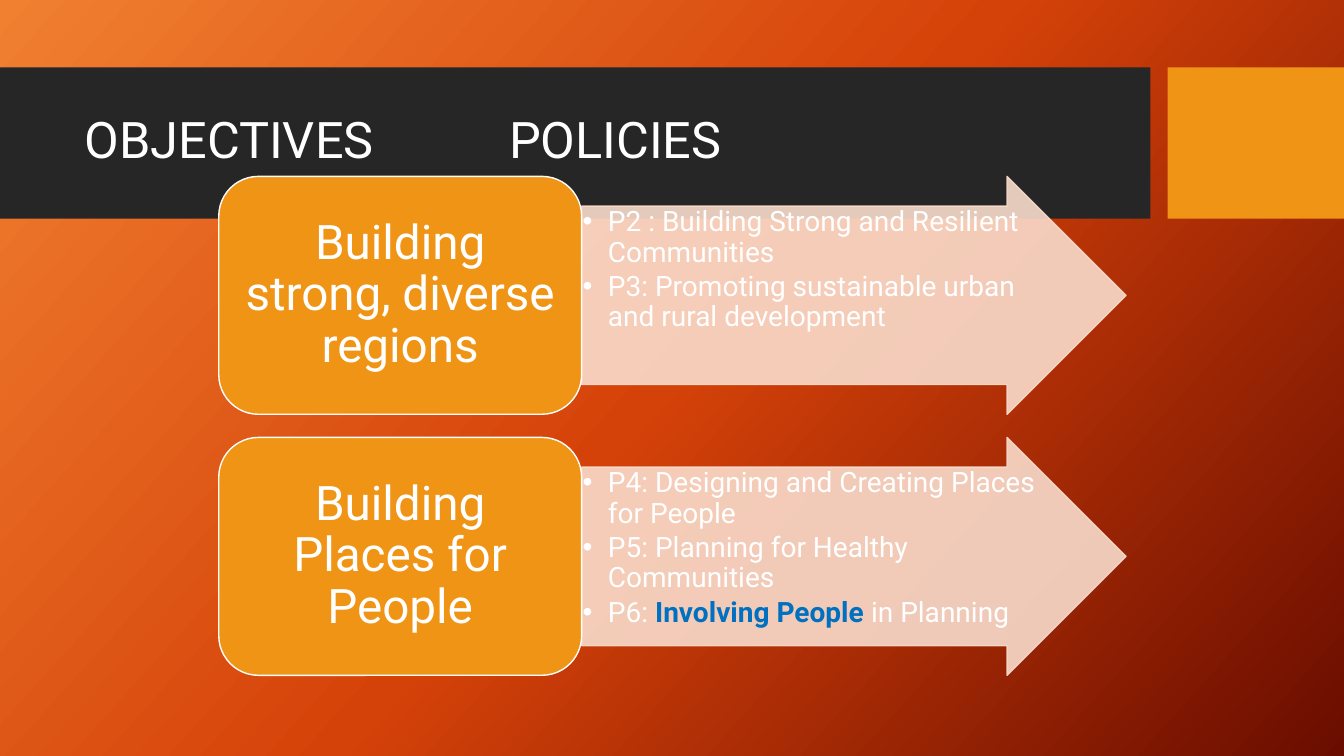
from copy import deepcopy
from dataclasses import dataclass

from lxml.etree import SubElement
from pptx import Presentation
from pptx.dml.color import RGBColor
from pptx.enum.shapes import MSO_SHAPE
from pptx.enum.text import MSO_ANCHOR, MSO_AUTO_SIZE, PP_ALIGN
from pptx.oxml.ns import qn
from pptx.util import Inches, Pt

SLIDE_WIDTH, SLIDE_HEIGHT = Inches(13.33), Inches(7.5)
FONT = "Roboto"
WHITE, CHARCOAL, AMBER, PEACH, BLUE = "FFFFFF", "262626", "F09415", "F9DCCC", "0070C0"
BACKGROUND_STOPS = (("F18031", 0), ("D54209", 50), ("6A0D00", 100))
TWO_CONTENT_LAYOUT = 3


@dataclass(frozen=True)
class Box:
    """A rectangle in percent of the slide's width and height."""
    left: float
    top: float
    width: float
    height: float

    def frame(self) -> dict:
        return {
            "left": round(SLIDE_WIDTH * self.left / 100),
            "top": round(SLIDE_HEIGHT * self.top / 100),
            "width": round(SLIDE_WIDTH * self.width / 100),
            "height": round(SLIDE_HEIGHT * self.height / 100),
        }


@dataclass(frozen=True)
class Run:
    text: str
    color: str = WHITE
    bold: bool = False


@dataclass(frozen=True)
class Objective:
    name: str
    policies: tuple[tuple[Run, ...], ...]


BAND = Box(0, 8.93, 85.6, 20)
BAND_ACCENT = Box(86.87, 8.93, 13.13, 20)
TITLE = Box(5.55, 10.93, 78.84, 15.73)
ROW_TOP, ROW_HEIGHT, ROW_PITCH = 23.33, 31.47, 34.53
CARD_LEFT, CARD_WIDTH = 16.28, 27
ARROW_LEFT, ARROW_WIDTH = CARD_LEFT + CARD_WIDTH, 40.5
LIST_WIDTH, LIST_INSET = 33.9, 4

OBJECTIVES = (
    Objective("Building strong, diverse regions", (
        (Run("P2 : Building Strong and Resilient Communities"),),
        (Run("P3: Promoting sustainable urban and rural development"),),
    )),
    Objective("Building Places for People", (
        (Run("P4: Designing and Creating Places for People"),),
        (Run("P5: Planning for Healthy Communities"),),
        (Run("P6: "), Run("Involving People", BLUE, True), Run(" in Planning")),
    )),
)


def rgb(color: str) -> RGBColor:
    return RGBColor.from_string(color)


def apply(target, values: dict) -> None:
    for name, value in values.items():
        setattr(target, name, value)


def paint_background(slide) -> None:
    fill = slide.background.fill
    fill.gradient()
    fill.gradient_angle = 360 - 42
    stop_list = next(slide.background._cSld.iter(qn("a:gsLst")))
    stop_list.insert(1, deepcopy(stop_list[0]))
    for stop, (color, percent) in zip(fill.gradient_stops, BACKGROUND_STOPS):
        stop.color.rgb = rgb(color)
        stop.position = percent / 100


def add_panel(slide, kind, box: Box, fill: str, line: str = "", opacity: int = 100):
    shape = slide.shapes.add_shape(kind, **box.frame())
    shape.shadow.inherit = False
    shape.fill.solid()
    shape.fill.fore_color.rgb = rgb(fill)
    if line:
        shape.line.color.rgb = rgb(line)
        shape.line.width = Pt(1)
    else:
        shape.line.fill.background()
    if opacity < 100:
        for color in shape.element.spPr.iter(qn("a:srgbClr")):
            SubElement(color, qn("a:alpha"), val=str(opacity * 1000))
    return shape


def set_frame(shape, horizontal: float, vertical: float, anchor) -> None:
    apply(shape.text_frame, {
        "word_wrap": True, "auto_size": MSO_AUTO_SIZE.NONE, "vertical_anchor": anchor,
        "margin_left": Inches(horizontal), "margin_right": Inches(horizontal),
        "margin_top": Inches(vertical), "margin_bottom": Inches(vertical),
    })


def write_paragraph(paragraph, runs: tuple[Run, ...], size: int, alignment, after: int = 0) -> None:
    apply(paragraph, {"alignment": alignment, "line_spacing": 0.9,
                      "space_before": Pt(0), "space_after": Pt(after)})
    for part in runs:
        run = paragraph.add_run()
        run.text = part.text
        apply(run.font, {"name": FONT, "size": Pt(size), "bold": part.bold})
        run.font.color.rgb = rgb(part.color)


def place_on_top(placeholder, box: Box) -> None:
    apply(placeholder, box.frame())
    placeholder.element.getparent().append(placeholder.element)


def fill_title(title) -> None:
    place_on_top(title, TITLE)
    set_frame(title, 0.1, 0.05, MSO_ANCHOR.MIDDLE)
    paragraph = title.text_frame.paragraphs[0]
    write_paragraph(paragraph, (Run("OBJECTIVES\tPOLICIES"),), 36, PP_ALIGN.LEFT)
    tabs = SubElement(paragraph._p.get_or_add_pPr(), qn("a:tabLst"))
    SubElement(tabs, qn("a:tab"), pos=str(Inches(4.21)), algn="l")


def fill_policies(body, box: Box, policies: tuple[tuple[Run, ...], ...]) -> None:
    place_on_top(body, box)
    set_frame(body, 0.01, 0.01, MSO_ANCHOR.TOP)
    for index, runs in enumerate(policies):
        frame = body.text_frame
        paragraph = frame.add_paragraph() if index else frame.paragraphs[0]
        paragraph.level = 1
        write_paragraph(paragraph, runs, 20, PP_ALIGN.LEFT, after=3)
        properties = paragraph._p.get_or_add_pPr()
        properties.set("marL", str(Inches(0.25)))
        properties.set("indent", str(-Inches(0.25)))
        SubElement(properties, qn("a:buChar"), char="•")


def add_objective(slide, row: int, objective: Objective, body) -> None:
    top = ROW_TOP + row * ROW_PITCH
    arrow = add_panel(slide, MSO_SHAPE.RIGHT_ARROW,
                      Box(ARROW_LEFT, top, ARROW_WIDTH, ROW_HEIGHT), PEACH, PEACH, 90)
    arrow.adjustments[0] = 0.75
    fill_policies(body, Box(ARROW_LEFT, top + LIST_INSET, LIST_WIDTH,
                            ROW_HEIGHT - 2 * LIST_INSET), objective.policies)
    card = add_panel(slide, MSO_SHAPE.ROUNDED_RECTANGLE,
                     Box(CARD_LEFT, top, CARD_WIDTH, ROW_HEIGHT), AMBER, WHITE)
    set_frame(card, 0.14, 0.07, MSO_ANCHOR.MIDDLE)
    write_paragraph(card.text_frame.paragraphs[0], (Run(objective.name),), 34, PP_ALIGN.CENTER)


def main() -> None:
    presentation = Presentation()
    apply(presentation, {"slide_width": SLIDE_WIDTH, "slide_height": SLIDE_HEIGHT})
    slide = presentation.slides.add_slide(presentation.slide_layouts[TWO_CONTENT_LAYOUT])
    title, *bodies = list(slide.placeholders)
    paint_background(slide)
    add_panel(slide, MSO_SHAPE.RECTANGLE, BAND, CHARCOAL)
    add_panel(slide, MSO_SHAPE.RECTANGLE, BAND_ACCENT, AMBER)
    fill_title(title)
    for row, (objective, body) in enumerate(zip(OBJECTIVES, bodies)):
        add_objective(slide, row, objective, body)
    presentation.save("out.pptx")


if __name__ == "__main__":
    main()
